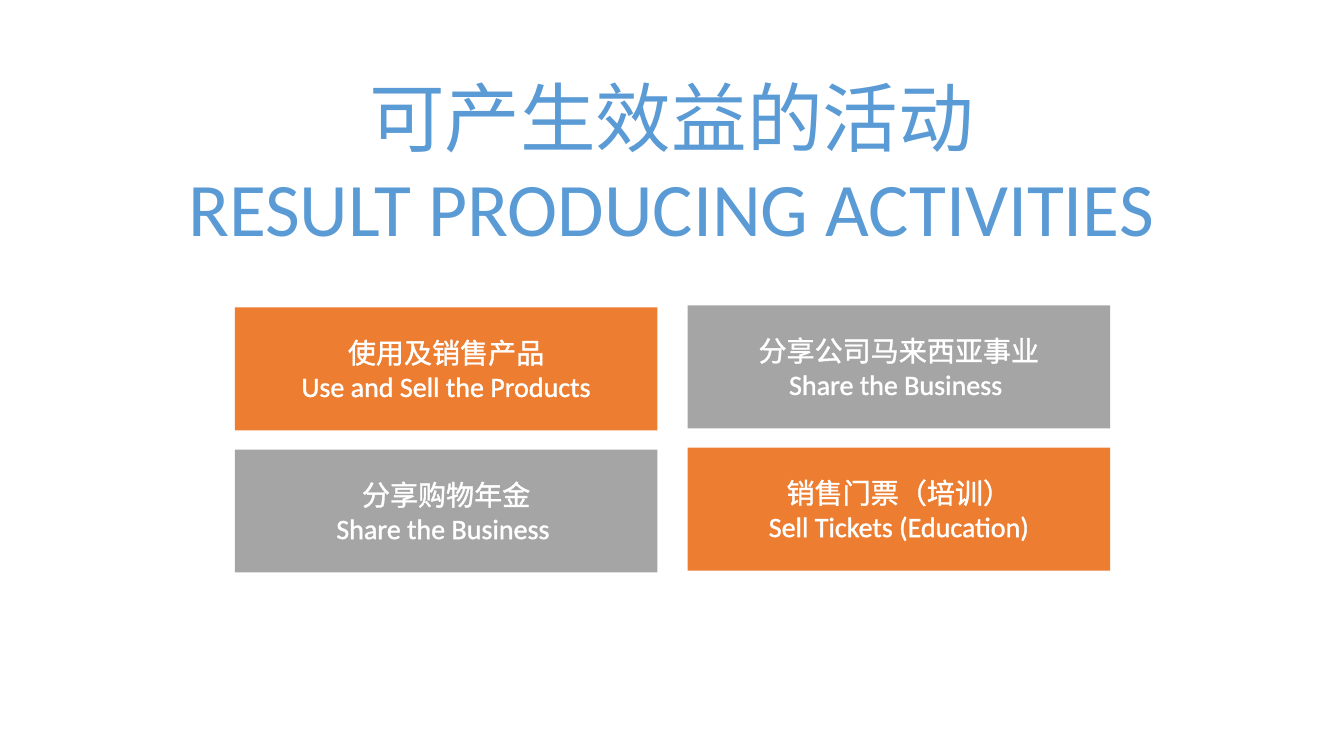
from dataclasses import dataclass

from lxml.etree import SubElement
from pptx import Presentation
from pptx.dml.color import RGBColor
from pptx.enum.shapes import MSO_SHAPE as Kind
from pptx.enum.text import MSO_ANCHOR as Anchor, MSO_AUTO_SIZE as Fit, PP_ALIGN as Align
from pptx.oxml.ns import qn
from pptx.util import Inches, Pt

BLUE = RGBColor(0x5B, 0x9B, 0xD5)
ORANGE = RGBColor(0xED, 0x7D, 0x31)
GRAY = RGBColor(0xA5, 0xA5, 0xA5)
WHITE = RGBColor(0xFF, 0xFF, 0xFF)
HAN = "Noto Sans CJK TC"
LATIN = "Calibri"

LEFT, TOP = 2.33, 3.05
WIDE, HIGH = 4.19, 1.22
COL, ROW = 4.49, 1.41
LIFT = 0.02


@dataclass(frozen=True)
class Card:
    col: int
    row: int
    fill: RGBColor
    han: str
    latin: str


CARDS = (
    Card(0, 0, ORANGE, "使用及销售产品", "Use and Sell the Products"),
    Card(1, 0, GRAY, "分享公司马来西亚事业", "Share the Business "),
    Card(0, 1, GRAY, "分享购物年金", "Share the Business "),
    Card(1, 1, ORANGE, "销售门票（培训）", "Sell Tickets (Education)"),
)


def write(frame, han: str, latin: str, *, size: int, color: RGBColor, anchor: Anchor) -> None:
    frame.vertical_anchor = anchor
    for num, (text, face) in enumerate(((han, HAN), (latin, LATIN))):
        para = frame.add_paragraph() if num else frame.paragraphs[0]
        para.alignment = Align.CENTER
        run = para.add_run()
        run.text = text
        font = run.font
        font.size = Pt(size)
        font.name = face
        font.color.rgb = color
        props = run._r.get_or_add_rPr()
        SubElement(props, qn("a:ea")).set("typeface", face)
        line = SubElement(props, qn("a:ln"))
        line.set("w", str(Pt(0.75)))
        paint = SubElement(line, qn("a:solidFill"))
        SubElement(paint, qn("a:srgbClr")).set("val", str(color))
        props.insert(0, line)


def head(slide) -> None:
    title = slide.shapes.title
    title.left, title.top = Inches(1.68), Inches(0.65)
    title.width, title.height = Inches(9.96), Inches(2.83)
    frame = title.text_frame
    frame.word_wrap = False
    frame.auto_size = Fit.SHAPE_TO_FIT_TEXT
    write(frame, "可产生效益的活动", "RESULT PRODUCING ACTIVITIES",
          size=54, color=BLUE, anchor=Anchor.TOP)


def draw(slide, card: Card) -> None:
    left = LEFT + card.col * COL
    top = TOP + card.row * ROW - card.col * LIFT
    box = slide.shapes.add_shape(
        Kind.RECTANGLE, Inches(left), Inches(top), Inches(WIDE), Inches(HIGH))
    box.shadow.inherit = False
    box.fill.solid()
    box.fill.fore_color.rgb = card.fill
    box.line.fill.background()
    box.text_frame.word_wrap = True
    write(box.text_frame, card.han, card.latin,
          size=20, color=WHITE, anchor=Anchor.MIDDLE)


def main() -> None:
    deck = Presentation()
    deck.slide_width, deck.slide_height = Inches(13.33), Inches(7.5)
    slide = deck.slides.add_slide(deck.slide_layouts[5])
    head(slide)
    for card in CARDS:
        draw(slide, card)
    deck.save("out.pptx")


if __name__ == "__main__":
    main()
